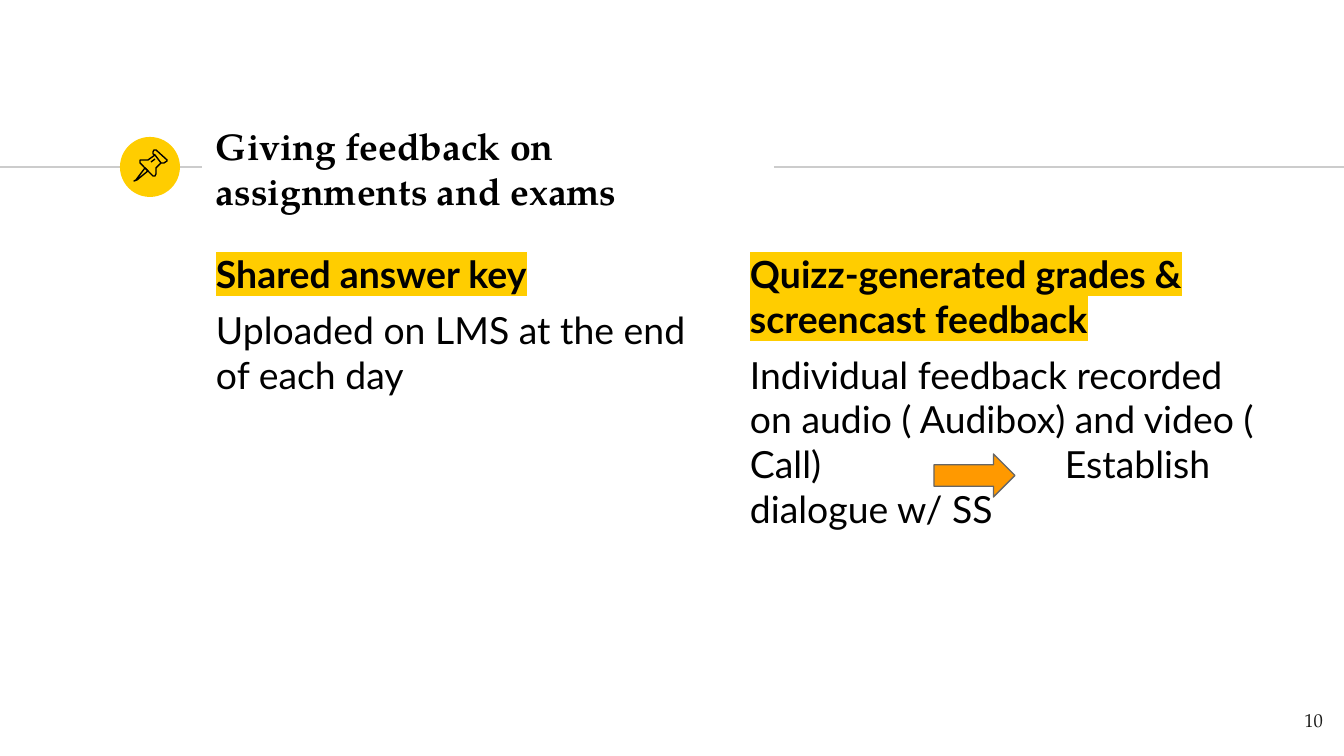
from lxml.etree import SubElement
from pptx import Presentation
from pptx.dml.color import RGBColor
from pptx.enum.shapes import MSO_CONNECTOR, MSO_SHAPE
from pptx.enum.text import MSO_ANCHOR, PP_ALIGN
from pptx.oxml.ns import qn
from pptx.util import Emu, Pt

SCALE = 914400 / 134.4  # EMU per px
INSET = 13
RULE_Y = 167

BLACK = RGBColor(0x00, 0x00, 0x00)
INK = RGBColor(0x1D, 0x1D, 0x1B)
YELLOW = RGBColor(0xFF, 0xCD, 0x00)
ORANGE = RGBColor(0xFF, 0x99, 0x00)
GREY = RGBColor(0x66, 0x66, 0x66)
LIGHT_GREY = RGBColor(0xCC, 0xCC, 0xCC)

TITLE = dict(name="TeX Gyre Pagella", size=Pt(20), bold=True)
HEADING = dict(name="Lato", size=Pt(20), bold=True)
BODY = dict(name="Lato", size=Pt(20), bold=False)
NUMBER = dict(name="TeX Gyre Pagella", size=Pt(10), bold=False)

# Each pin part: outline points and whether the outline is closed
PIN_PARTS = [
    ([(145, 168), (136, 180), (134, 181), (137, 180), (148, 171)], True),
    ([(155, 155), (161, 163), (164, 163), (167, 161), (167, 160),
      (156, 150), (154, 150), (153, 152), (153, 154)], True),
    ([(155, 155), (148, 160), (145, 160), (140, 160), (140, 163),
      (153, 176), (155, 176), (156, 174), (156, 168), (161, 163)], False),
    ([(151, 162), (155, 159)], False),
]


def px(length):
    return Emu(round(length * SCALE))


def set_line(shape, color):
    shape.line.color.rgb = color
    shape.line.width = Pt(0.75)


def add_rule(slide, left, right):
    rule = slide.shapes.add_connector(
        MSO_CONNECTOR.STRAIGHT, px(left), px(RULE_Y), px(right), px(RULE_Y))
    set_line(rule, LIGHT_GREY)
    SubElement(rule._element.spPr, qn("a:effectLst"))


def add_filled_shape(slide, kind, box, fill, outline=None):
    shape = slide.shapes.add_shape(kind, *map(px, box))
    shape.shadow.inherit = False
    shape.fill.solid()
    shape.fill.fore_color.rgb = fill
    if outline is None:
        shape.line.fill.background()
    else:
        set_line(shape, outline)


def add_pin(slide):
    group = slide.shapes.add_group_shape()
    for points, closed in PIN_PARTS:
        builder = group.shapes.build_freeform(*points[0], scale=SCALE)
        builder.add_line_segments(points[1:], close=closed)
        part = builder.convert_to_shape()
        part.shadow.inherit = False
        part.fill.background()
        set_line(part, BLACK)


def add_text_frame(slide, box, anchor=MSO_ANCHOR.TOP):
    frame = slide.shapes.add_textbox(*map(px, box)).text_frame
    frame.word_wrap = True
    frame.vertical_anchor = anchor
    for side in ("left", "top", "right", "bottom"):
        setattr(frame, f"margin_{side}", px(INSET))
    return frame


def write(paragraph, text, style, color=BLACK):
    run = paragraph.add_run()
    run.text = text
    for name, value in style.items():
        setattr(run.font, name, value)
    run.font.color.rgb = color
    return run


def highlight(run, color):
    properties = run.font._element
    mark = SubElement(properties, qn("a:highlight"))
    SubElement(mark, qn("a:srgbClr"), val=str(color))
    properties.find(qn("a:solidFill")).addnext(mark)


def add_tab_stop(paragraph, position):
    tabs = SubElement(paragraph._p.get_or_add_pPr(), qn("a:tabLst"))
    SubElement(tabs, qn("a:tab"), pos=str(px(position)), algn="l")


def add_column(slide, left, width, heading, body, tab=None):
    frame = add_text_frame(slide, (left, 238, width, 474))
    first, second = frame.paragraphs[0], frame.add_paragraph()
    for paragraph in (first, second):
        paragraph.space_before = Pt(6)
    highlight(write(first, heading, HEADING), YELLOW)
    write(second, body, BODY)
    if tab is not None:
        add_tab_stop(second, tab)


def main():
    presentation = Presentation()
    presentation.slide_width, presentation.slide_height = px(1344), px(756)
    slide = presentation.slides.add_slide(presentation.slide_layouts[6])

    add_rule(slide, 0, 202)
    add_filled_shape(slide, MSO_SHAPE.OVAL, (120, 137, 60, 60), YELLOW)
    add_rule(slide, 774, 1344)
    add_pin(slide)

    title = add_text_frame(slide, (203, 136, 570, 65), MSO_ANCHOR.MIDDLE)
    write(title.paragraphs[0], "Giving feedback on assignments and exams", TITLE)

    add_column(slide, 203, 504, "Shared answer key",
               "Uploaded on LMS at the end of each day")
    add_column(slide, 737, 539, "Quizz-generated grades & screencast feedback",
               "Individual feedback recorded on audio ( Audibox) and video ( "
               "Call)\tEstablish dialogue w/ SS", tab=315)

    number = add_text_frame(slide, (1255, 698, 81, 58)).paragraphs[0]
    number.alignment = PP_ALIGN.RIGHT
    write(number, "10", NUMBER, INK)

    add_filled_shape(slide, MSO_SHAPE.RIGHT_ARROW, (934, 454, 81, 43), ORANGE, GREY)
    presentation.save("out.pptx")


if __name__ == "__main__":
    main()
